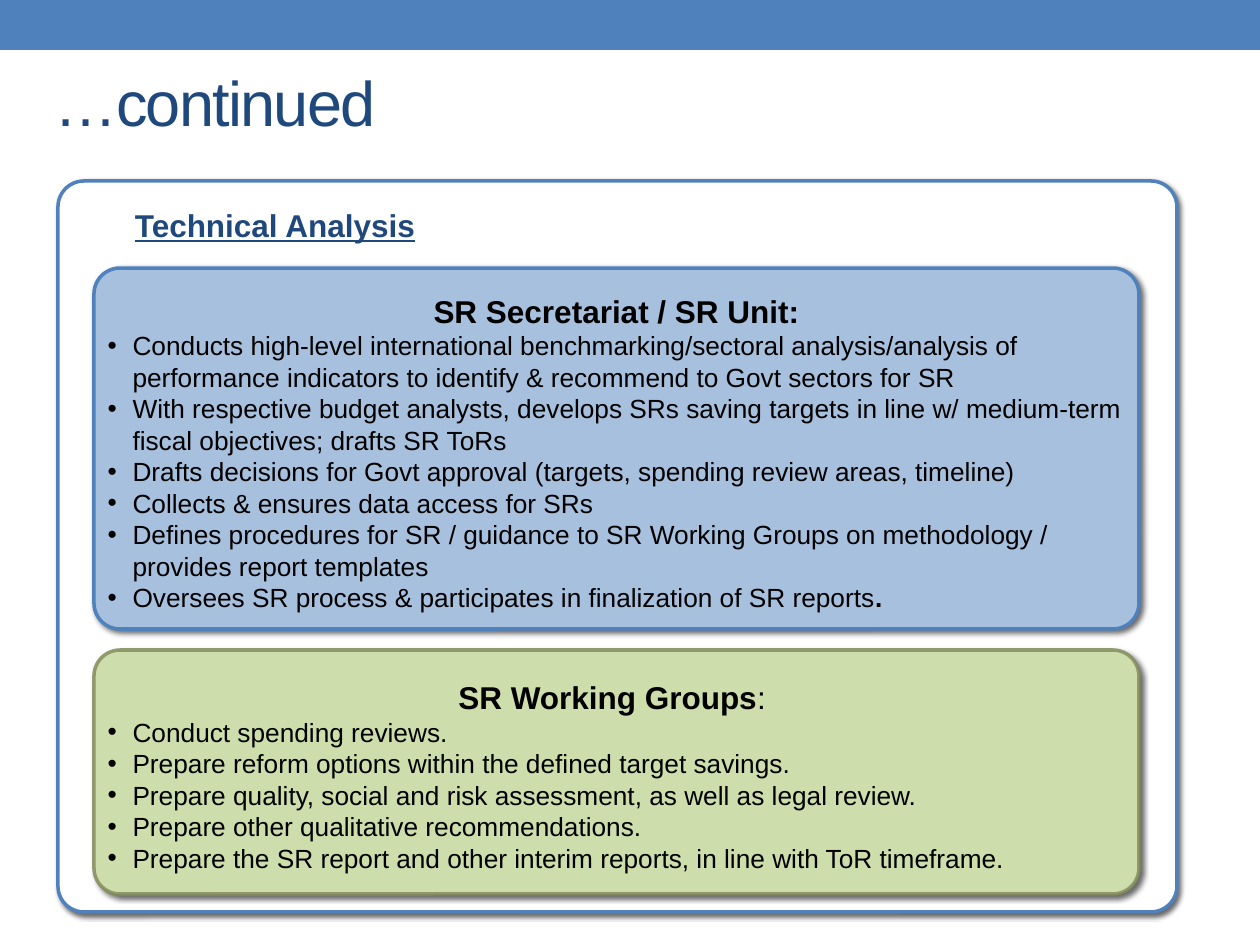
from lxml.etree import SubElement
from pptx import Presentation
from pptx.dml.color import RGBColor
from pptx.enum.shapes import MSO_SHAPE as Shape
from pptx.enum.text import MSO_ANCHOR as Anchor, PP_ALIGN as Align
from pptx.oxml.ns import qn
from pptx.util import Emu, Pt

SCALE = 914400 / 126
INSET = 6
INDENT = 25
CORNER = 26
COLORS = {
    "blue": "4F81BD", "navy": "1F497D", "black": "000000", "white": "FFFFFF",
    "secretariat": "A7C0DE", "groups": "CDDDAC", "olive": "848D5E",
}
SECRETARIAT_TASKS = [
    ["Conducts high-level international benchmarking/sectoral analysis/analysis of "
     "performance indicators to identify & recommend to Govt sectors for SR"],
    ["With respective budget analysts, develops SRs saving targets in line w/ "
     "medium-term fiscal objectives; drafts SR ToRs"],
    ["Drafts decisions for Govt approval (targets, spending review areas, timeline)"],
    ["Collects & ensures data access for SRs"],
    ["Defines procedures for SR / guidance to SR Working Groups on methodology / "
     "provides report templates"],
    ["Oversees SR process & participates in finalization of SR reports", "."],
]
GROUP_TASKS = [
    ["Conduct spending reviews."],
    ["Prepare reform options within the defined target savings."],
    ["Prepare quality, social and risk assessment, as well as legal review."],
    ["Prepare other qualitative recommendations."],
    ["Prepare the SR report and other interim reports, in line with ToR timeframe."],
]


def px(length):
    return Emu(round(length * SCALE))


def rgb(name):
    return RGBColor.from_string(COLORS[name])


def add_run(paragraph, text, size, color="black", bold=False):
    run = paragraph.add_run()
    run.text = text
    run.font.name = "Arial"
    run.font.size = Pt(size)
    run.font.bold = bold
    run.font.color.rgb = rgb(color)
    return run


def set_frame(frame, anchor):
    frame.word_wrap = True
    frame.vertical_anchor = anchor
    frame.margin_left = frame.margin_right = px(INSET)
    frame.margin_top = frame.margin_bottom = px(INSET)


def add_label(slide, box, anchor):
    label = slide.shapes.add_textbox(*map(px, box))
    set_frame(label.text_frame, anchor)
    return label.text_frame.paragraphs[0]


def add_top_bar(slide, box):
    bar = slide.shapes.add_shape(Shape.RECTANGLE, *map(px, box))
    bar.shadow.inherit = False
    bar.fill.solid()
    bar.fill.fore_color.rgb = rgb("blue")
    bar.line.fill.background()


def add_title(slide, box):
    title = add_run(add_label(slide, box, Anchor.MIDDLE), "…continued", 36, "navy")
    title._r.get_or_add_rPr().set("spc", "-100")


def add_panel(slide, box, fill, outline, opacity=100):
    panel = slide.shapes.add_shape(Shape.ROUNDED_RECTANGLE, *map(px, box))
    panel.adjustments[0] = CORNER / box[3]
    panel.fill.solid()
    panel.fill.fore_color.rgb = rgb(fill)
    panel.line.color.rgb = rgb(outline)
    panel.line.width = Pt(2)
    if opacity < 100:
        line_color = panel.line._ln.find(".//" + qn("a:srgbClr"))
        SubElement(line_color, qn("a:alpha"), val=str(opacity * 1000))
    panel.shadow.inherit = False
    effects = panel._element.spPr.find(qn("a:effectLst"))
    shadow = SubElement(effects, qn("a:outerShdw"), blurRad=str(Pt(3)),
                        dist=str(Pt(2)), dir="2700000", algn="tl", rotWithShape="0")
    shadow_color = SubElement(shadow, qn("a:srgbClr"), val=COLORS["black"])
    SubElement(shadow_color, qn("a:alpha"), val="60000")
    return panel


def add_bullet(paragraph):
    properties = paragraph._p.get_or_add_pPr()
    properties.set("marL", str(px(INDENT)))
    properties.set("indent", str(px(-INDENT)))
    SubElement(properties, qn("a:buFont"), typeface="Arial")
    SubElement(properties, qn("a:buChar"), char="•")


def add_task_card(slide, box, heading, tasks, fill, outline, opacity=100):
    frame = add_panel(slide, box, fill, outline, opacity).text_frame
    set_frame(frame, Anchor.MIDDLE)
    heading_line = frame.paragraphs[0]
    heading_line.alignment = Align.CENTER
    heading_line.line_spacing = 1.2
    for text, bold in heading:
        add_run(heading_line, text, 18, bold=bold)
    for task in tasks:
        task_line = frame.add_paragraph()
        task_line.alignment = Align.LEFT
        add_bullet(task_line)
        for position, text in enumerate(task):
            add_run(task_line, text, 15, bold=position > 0)


def add_technical_analysis(slide, box):
    left, top, width, height = box
    add_panel(slide, box, "white", "blue")
    caption = add_label(slide, (left + 71, top + 19, 543, 48), Anchor.TOP)
    add_run(caption, "Technical Analysis", 18, "navy", True).font.underline = True
    card_left, card_width = left + 36, width - 74
    add_task_card(slide, (card_left, top + 87, card_width, 361),
                  [("SR Secretariat / SR Unit:", True)],
                  SECRETARIAT_TASKS, "secretariat", "blue")
    add_task_card(slide, (card_left, top + 469, card_width, 244),
                  [("SR Working Groups", True), (": ", False)],
                  GROUP_TASKS, "groups", "olive", 85)


def main():
    deck = Presentation()
    deck.slide_width, deck.slide_height = px(1260), px(945)
    slide = deck.slides.add_slide(deck.slide_layouts[6])
    add_top_bar(slide, (0, 0, 1260, 50))
    add_title(slide, (49, 33, 1134, 136))
    add_technical_analysis(slide, (58, 181, 1119, 731))
    deck.save("out.pptx")


if __name__ == "__main__":
    main()
